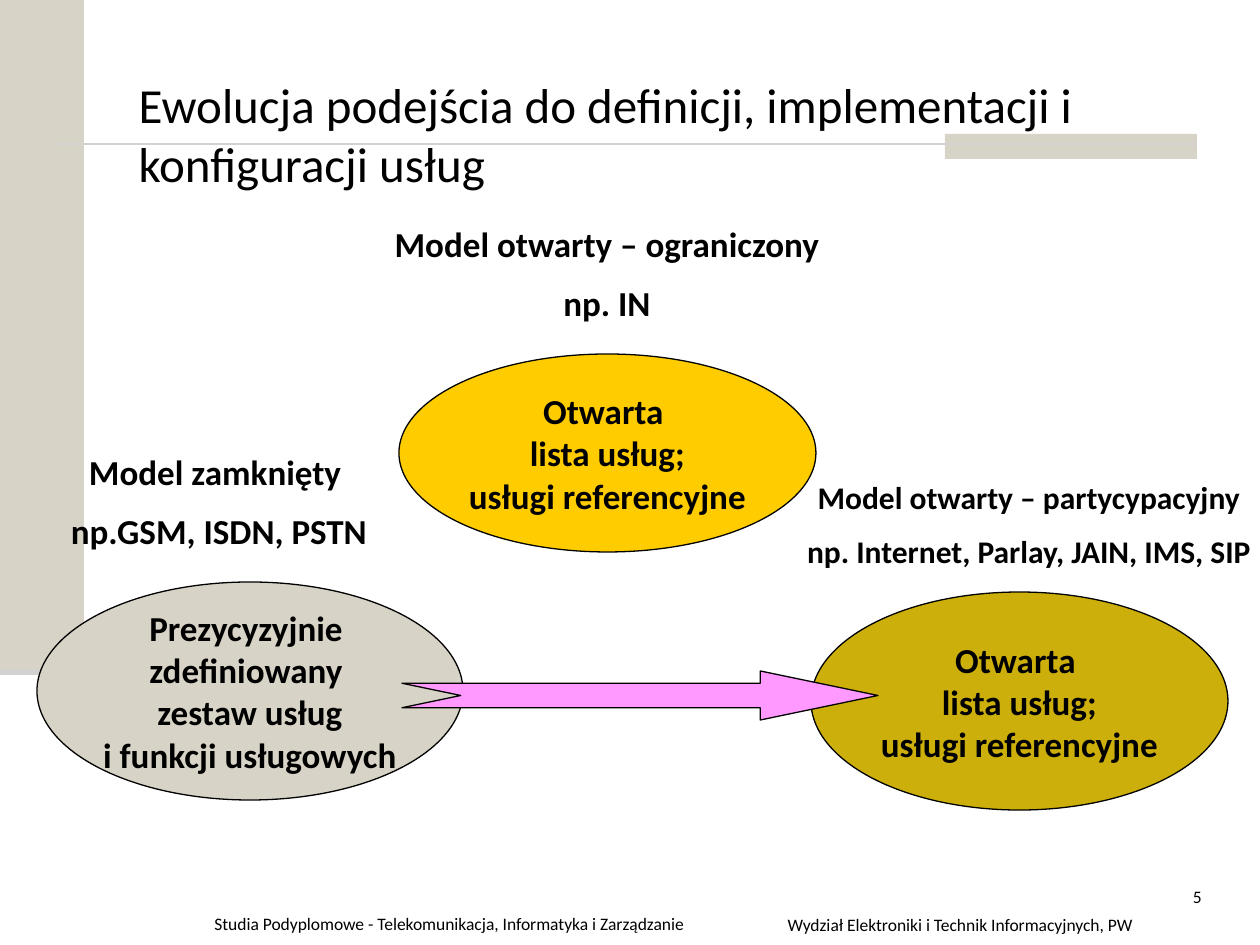
from lxml.etree import SubElement
from pptx import Presentation
from pptx.dml.color import RGBColor
from pptx.enum.shapes import MSO_CONNECTOR, MSO_SHAPE
from pptx.enum.text import MSO_ANCHOR, MSO_AUTO_SIZE, PP_ALIGN
from pptx.oxml.ns import qn
from pptx.util import Pt

PX = 914400 / 126
COLORS = {
    "sand": "D8D3C7", "rule": "D4D2D0", "ink": "000000",
    "gold": "FFCC00", "olive": "CCAF0A", "pink": "FF99FF",
}


def write(frame, lines, size, align, bold=False, gap=0):
    for i, line in enumerate(lines):
        para = frame.paragraphs[0] if i == 0 else frame.add_paragraph()
        para.alignment = align
        if i:
            para.space_before = Pt(gap)
        run = para.add_run()
        run.text = line
        run.font.name = "Calibri"
        run.font.size = Pt(size)
        run.font.bold = bold
        run.font.color.rgb = RGBColor.from_string(COLORS["ink"])


def draw(kind, box, fill, edge=True):
    shape = shapes.add_shape(kind, *[round(n * PX) for n in box])
    shape.shadow.inherit = False
    shape.fill.solid()
    shape.fill.fore_color.rgb = RGBColor.from_string(COLORS[fill])
    if edge:
        shape.line.color.rgb = RGBColor.from_string(COLORS["ink"])
        shape.line.width = Pt(0.75)
    else:
        shape.line.fill.background()
    return shape


prs = Presentation()
prs.slide_width, prs.slide_height = round(1260 * PX), round(945 * PX)
slide = prs.slides.add_slide(prs.slide_layouts[5])
shapes = slide.shapes

# Side band, title bar and thin rules
for box in [(0, 0, 84, 672), (945, 134, 252, 25)]:
    draw(MSO_SHAPE.RECTANGLE, box, "sand", edge=False)
for left, right, y, width in [(53, 1197, 144, 1.5), (0, 84, 672, 3.5)]:
    ends = [round(n * PX) for n in (left, y, right, y)]
    rule = shapes.add_connector(MSO_CONNECTOR.STRAIGHT, *ends)
    rule.line.color.rgb = RGBColor.from_string(COLORS["rule"])
    rule.line.width = Pt(width)
    SubElement(rule._element.spPr, qn("a:effectLst"))

# Title, in front of the rules
title = shapes.title
title._element.getparent().append(title._element)
title.left, title.top, title.width, title.height = [
    round(n * PX) for n in (126, 68, 1071, 130)]
title.text_frame.auto_size = MSO_AUTO_SIZE.NONE
title.text_frame.vertical_anchor = MSO_ANCHOR.MIDDLE
write(title.text_frame,
      ["Ewolucja podejścia do definicji, implementacji i konfiguracji usług"],
      28, PP_ALIGN.LEFT)

# Service models
opened = ["Otwarta ", "lista usług;", " usługi referencyjne "]
closed = ["Prezycyzyjnie ", "zdefiniowany ", "zestaw usług",
          " i funkcji usługowych "]
for box, fill, lines in [
    ((37, 582, 426, 218), "sand", closed),
    ((399, 354, 417, 198), "gold", opened),
    ((811, 592, 417, 218), "olive", opened),
]:
    oval = draw(MSO_SHAPE.OVAL, box, fill)
    oval.text_frame.word_wrap = False
    oval.text_frame.vertical_anchor = MSO_ANCHOR.MIDDLE
    write(oval.text_frame, lines, 20, PP_ALIGN.CENTER, bold=True)

# Model names, footer and page number
mid, left, right = PP_ALIGN.CENTER, PP_ALIGN.LEFT, PP_ALIGN.RIGHT
for box, lines, size, align, bold in [
    ((8, 444, 422, 117), ["Model zamknięty ", "np.GSM, ISDN, PSTN"],
     20, mid, True),
    ((369, 216, 476, 117), ["Model otwarty – ograniczony", "np. IN"],
     20, mid, True),
    ((791, 472, 476, 107),
     ["Model otwarty – partycypacyjny", "np. Internet, Parlay, JAIN, IMS, SIP"],
     18, mid, True),
    ((202, 907, 562, 35),
     ["Studia Podyplomowe - Telekomunikacja, Informatyka i Zarządzanie"],
     10, left, False),
    ((755, 908, 410, 34), ["Wydział Elektroniki i Technik Informacyjnych, PW"],
     10, mid, False),
    ((1154, 880, 60, 63), ["5"], 10, right, False),
]:
    label = shapes.add_textbox(*[round(n * PX) for n in box])
    label.text_frame.word_wrap = True
    write(label.text_frame, lines, size, align, bold, gap=size / 2)

# Arrow from the closed to the open model
arrow = draw(MSO_SHAPE.NOTCHED_RIGHT_ARROW, (402, 671, 476, 49), "pink")
arrow.adjustments[0] = 0.5
arrow.adjustments[1] = 2.4

prs.save("out.pptx")
